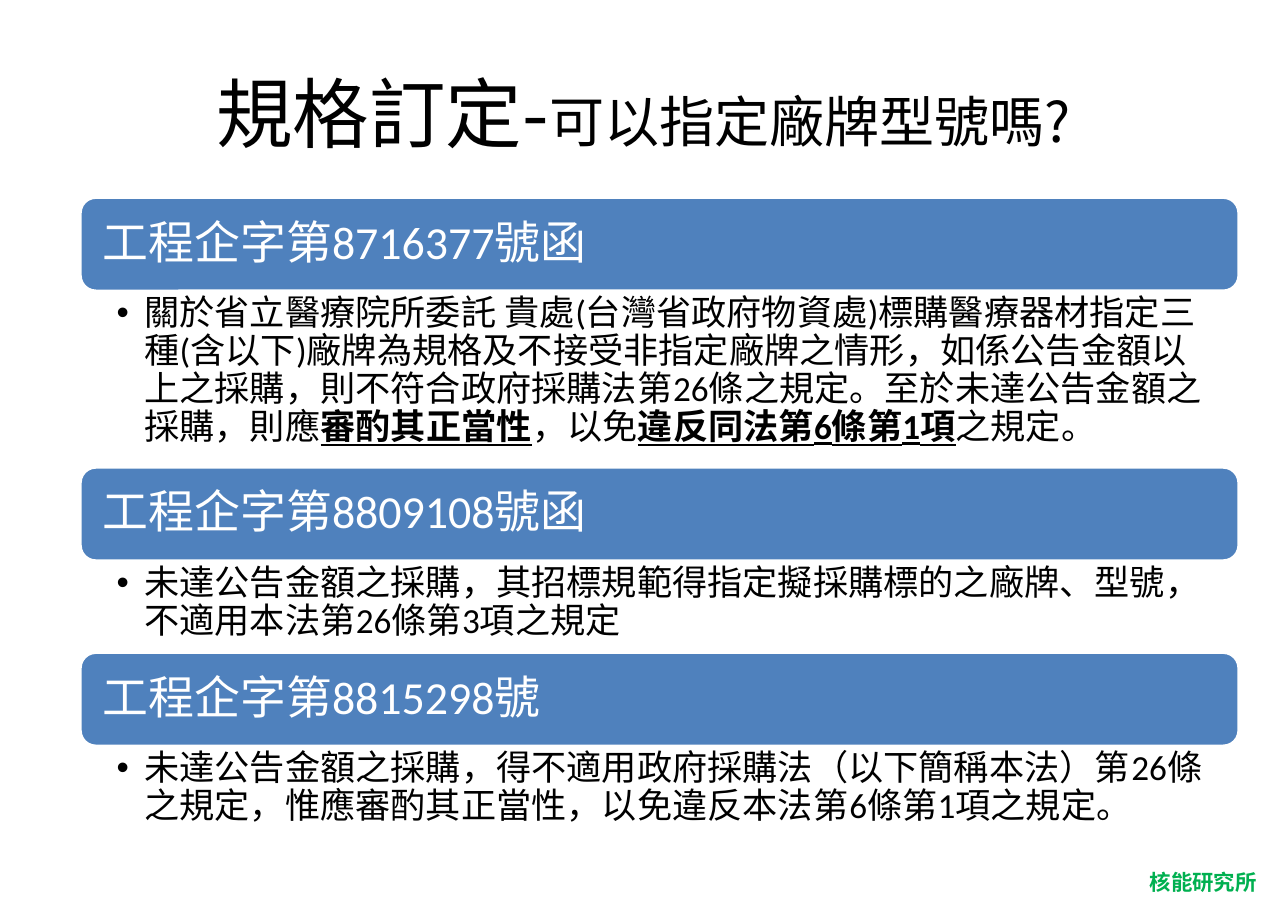
import pptx
import pptx.dml.color
import pptx.enum.shapes
import pptx.enum.text
import pptx.oxml.ns
import pptx.util
from lxml import etree

Cm = pptx.util.Cm
Pt = pptx.util.Pt
Color = pptx.dml.color.RGBColor
Align = pptx.enum.text.PP_ALIGN
Anchor = pptx.enum.text.MSO_ANCHOR
qn = pptx.oxml.ns.qn

BLUE = Color(0x4F, 0x81, 0xBD)
WHITE = Color(0xFF, 0xFF, 0xFF)
BLACK = Color(0, 0, 0)
GREEN = Color(0, 0xB0, 0x50)
LATIN = "Calibri"
HAN = "Noto Sans CJK SC"

LEFT, WIDTH, TOP, BAR = 1.85, 26.72, 4.55, 2.16

RULES = [
    ("工程企字第8716377號函", 4.06, [
        ("關於省立醫療院所委託 貴處(台灣省政府物資處)標購醫療器材指定三種(含以下)廠牌為規格及不接受非指定廠牌之情形，如係公告金額以上之採購，則不符合政府採購法第26條之規定。至於未達公告金額之採購，則應", False),
        ("審酌其正當性", True),
        ("，以免", False),
        ("違反同法第6條第1項", True),
        ("之規定。", False)]),
    ("工程企字第8809108號函", 2.11, [
        ("未達公告金額之採購，其招標規範得指定擬採購標的之廠牌、型號，不適用本法第26條第3項之規定", False)]),
    ("工程企字第8815298號", 2.11, [
        ("未達公告金額之採購，得不適用政府採購法（以下簡稱本法）第26條之規定，惟應審酌其正當性，以免違反本法第6條第1項之規定。", False)]),
]


class Page:
    def __init__(self, deck):
        self.slide = deck.slides.add_slide(deck.slide_layouts[5])
        self.shapes = self.slide.shapes

    def frame(self, shape, pads, anchor, wrap=True):
        frame = shape.text_frame
        frame.word_wrap = wrap
        frame.vertical_anchor = anchor
        frame.margin_left, frame.margin_top, frame.margin_right, frame.margin_bottom = map(Cm, pads)
        return frame

    def style(self, para, color, size=None, name=LATIN, bold=None):
        font = para.font
        font.name, font.bold = name, bold
        font.color.rgb = color
        if size:
            font.size = Pt(size)
        if name == HAN:
            base = para._p.pPr.find(qn("a:defRPr"))
            etree.SubElement(base, qn("a:ea"), typeface=name)

    def title(self, parts):
        shape = self.shapes.title
        shape.left, shape.top, shape.width, shape.height = map(Cm, (1.47, 0.84, 26.75, 3.5))
        frame = self.frame(shape, (0.28, 0.15, 0.28, 0.15), Anchor.MIDDLE)
        para = frame.paragraphs[0]
        para.alignment = Align.CENTER
        self.style(para, BLACK, name=HAN)
        for text, size in parts:
            run = para.add_run()
            run.text = text
            run.font.size = Pt(size)

    def bar(self, top, text):
        kind = pptx.enum.shapes.MSO_SHAPE.ROUNDED_RECTANGLE
        shape = self.shapes.add_shape(kind, Cm(LEFT), Cm(top), Cm(WIDTH), Cm(BAR))
        shape.shadow.inherit = False
        shape.fill.solid()
        shape.fill.fore_color.rgb = BLUE
        shape.line.color.rgb = WHITE
        shape.line.width = Pt(2)
        para = self.frame(shape, (0.41,) * 4, Anchor.MIDDLE).paragraphs[0]
        para.text = text
        para.alignment = Align.LEFT
        para.line_spacing = 0.9
        self.style(para, WHITE, 30)

    def body(self, top, height, parts):
        box = self.shapes.add_textbox(Cm(LEFT), Cm(top), Cm(WIDTH), Cm(height))
        para = self.frame(box, (0.84, 0.1, 0.58, 0.1), Anchor.TOP).paragraphs[0]
        para.line_spacing = 0.9
        props = para._p.get_or_add_pPr()
        props.set("marL", str(Cm(0.64)))
        props.set("indent", str(Cm(-0.64)))
        etree.SubElement(props, qn("a:buFont"), typeface="Arial")
        etree.SubElement(props, qn("a:buChar"), char="•")
        self.style(para, BLACK, 23)
        for text, strong in parts:
            run = para.add_run()
            run.text = text
            if strong:
                run.font.bold = run.font.underline = True

    def label(self, text):
        box = self.shapes.add_textbox(Cm(26.26), Cm(19.91), Cm(3), Cm(0.86))
        frame = self.frame(box, (0.25, 0.13, 0.25, 0.13), Anchor.TOP, False)
        frame.auto_size = pptx.enum.text.MSO_AUTO_SIZE.SHAPE_TO_FIT_TEXT
        para = frame.paragraphs[0]
        para.text = text
        self.style(para, GREEN, 14, HAN, True)


def main():
    deck = pptx.Presentation()
    deck.slide_width, deck.slide_height = Cm(29.7), Cm(21)
    page = Page(deck)
    page.title([("規格訂定-", 50), ("可以指定廠牌型號嗎?", 36)])
    top = TOP
    for head, height, parts in RULES:
        page.bar(top, head)
        page.body(top + BAR, height, parts)
        top += BAR + height
    page.label("核能研究所")
    deck.save("out.pptx")


if __name__ == "__main__":
    main()
